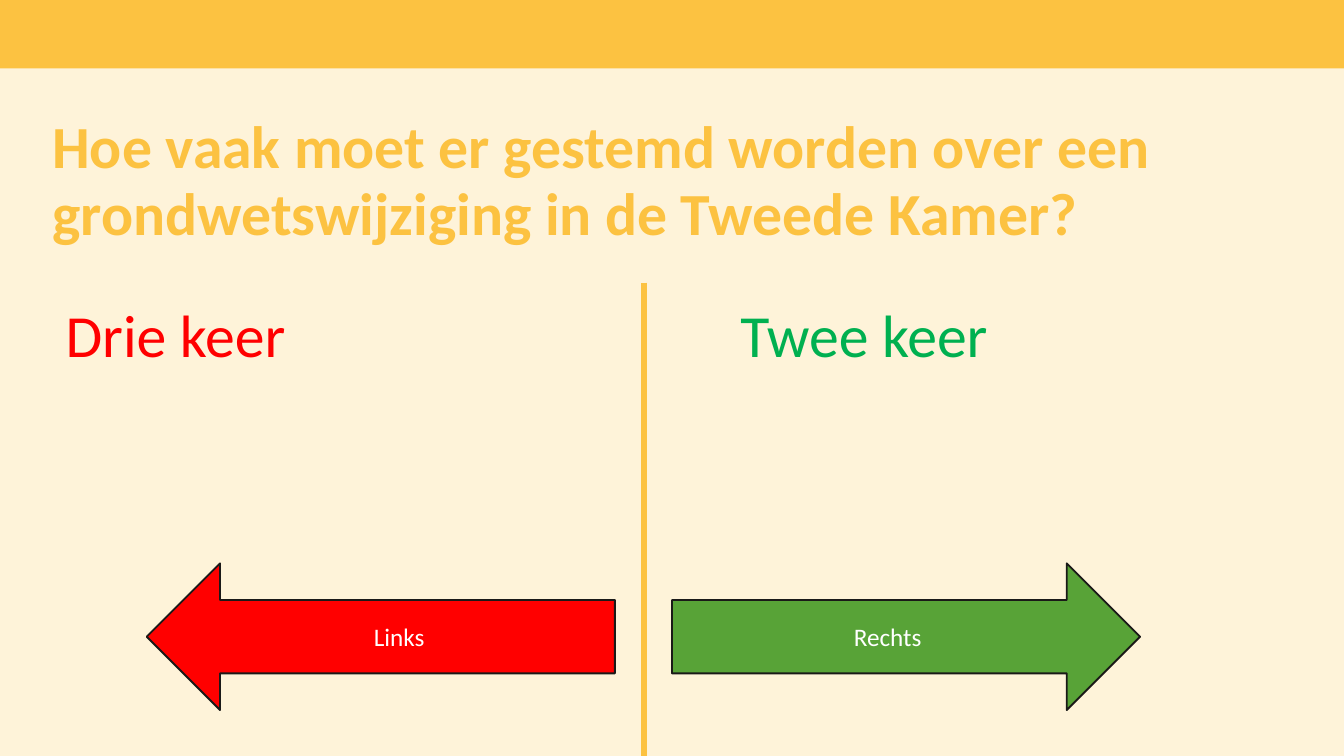
from lxml.etree import SubElement as Sub
from pptx import Presentation as Deck
from pptx.dml.color import RGBColor as Rgb
from pptx.enum.shapes import MSO_CONNECTOR as Link, MSO_SHAPE as Form
from pptx.enum.text import MSO_ANCHOR as Anchor, MSO_AUTO_SIZE as Fit, PP_ALIGN as Align
from pptx.oxml.ns import qn
from pptx.util import Pt

GOLD = Rgb(0xFC, 0xC2, 0x41)
CREAM = Rgb(0xFE, 0xF3, 0xD9)
RED = Rgb(0xFF, 0x00, 0x00)
GREEN = Rgb(0x00, 0xB0, 0x50)
LEAF = Rgb(0x58, 0xA3, 0x37)
INK = Rgb(0x1A, 0x19, 0x18)
WHITE = Rgb(0xFF, 0xFF, 0xFF)


class Page:
    font = "Calibri"
    large = 32
    small = 13.5

    def __init__(self, deck):
        self.slide = deck.slides.add_slide(deck.slide_layouts[5])
        self.shapes = self.slide.shapes
        fill = self.slide.background.fill
        fill.solid()
        fill.fore_color.rgb = CREAM

    def words(self, para, text, size, color, bold=False):
        run = para.add_run()
        run.text = text
        font = run.font
        font.name = self.font
        font.size = Pt(size)
        font.bold = bold
        font.color.rgb = color

    def title(self, text, left, top, width, height):
        box = self.shapes.title
        box.left, box.top = Pt(left), Pt(top)
        box.width, box.height = Pt(width), Pt(height)
        frame = box.text_frame
        frame.word_wrap = True
        frame.auto_size = Fit.NONE
        frame.vertical_anchor = Anchor.TOP
        frame.margin_left = frame.margin_right = frame.margin_bottom = 0
        frame.margin_top = Pt(3.6)
        para = frame.paragraphs[0]
        para.alignment = Align.LEFT
        para.line_spacing = Pt(36)
        self.words(para, text, self.large, GOLD, True)

    def shape(self, form, left, top, width, height, fill):
        item = self.shapes.add_shape(form, Pt(left), Pt(top), Pt(width), Pt(height))
        item.shadow.inherit = False
        item.fill.solid()
        item.fill.fore_color.rgb = fill
        return item

    def band(self, width, height):
        self.shape(Form.RECTANGLE, 0, 0, width, height, GOLD).line.fill.background()

    def rule(self, left, top, end):
        line = self.shapes.add_connector(Link.STRAIGHT, Pt(left), Pt(top), Pt(left), Pt(end))
        line.line.color.rgb = GOLD
        line.line.width = Pt(3)
        Sub(line._element.spPr, qn("a:effectLst"))

    def answer(self, text, left, width, color):
        box = self.shapes.add_textbox(Pt(left), Pt(156.2), Pt(width), Pt(46))
        frame = box.text_frame
        frame.word_wrap = True
        frame.auto_size = Fit.SHAPE_TO_FIT_TEXT
        self.words(frame.paragraphs[0], text, self.large, color)

    def arrow(self, form, text, left, fill):
        item = self.shape(form, left, 301.8, 250.8, 78.6, fill)
        item.line.color.rgb = INK
        item.line.width = Pt(1)
        frame = item.text_frame
        frame.vertical_anchor = Anchor.MIDDLE
        para = frame.paragraphs[0]
        para.alignment = Align.CENTER
        self.words(para, text, self.small, WHITE)


def main():
    deck = Deck()
    deck.slide_width, deck.slide_height = Pt(720), Pt(405)
    page = Page(deck)
    page.band(720, 36.7)
    page.title(
        "Hoe vaak moet er gestemd worden over een grondwetswijziging in de Tweede Kamer?",
        28, 57, 692, 70.5,
    )
    page.rule(345, 151.4, 550)
    page.answer("Drie keer", 28, 345, RED)
    page.answer("Twee keer", 389.5, 232, GREEN)
    page.arrow(Form.LEFT_ARROW, "Links", 78.6, RED)
    page.arrow(Form.RIGHT_ARROW, "Rechts", 360, LEAF)
    deck.save("out.pptx")


if __name__ == "__main__":
    main()
